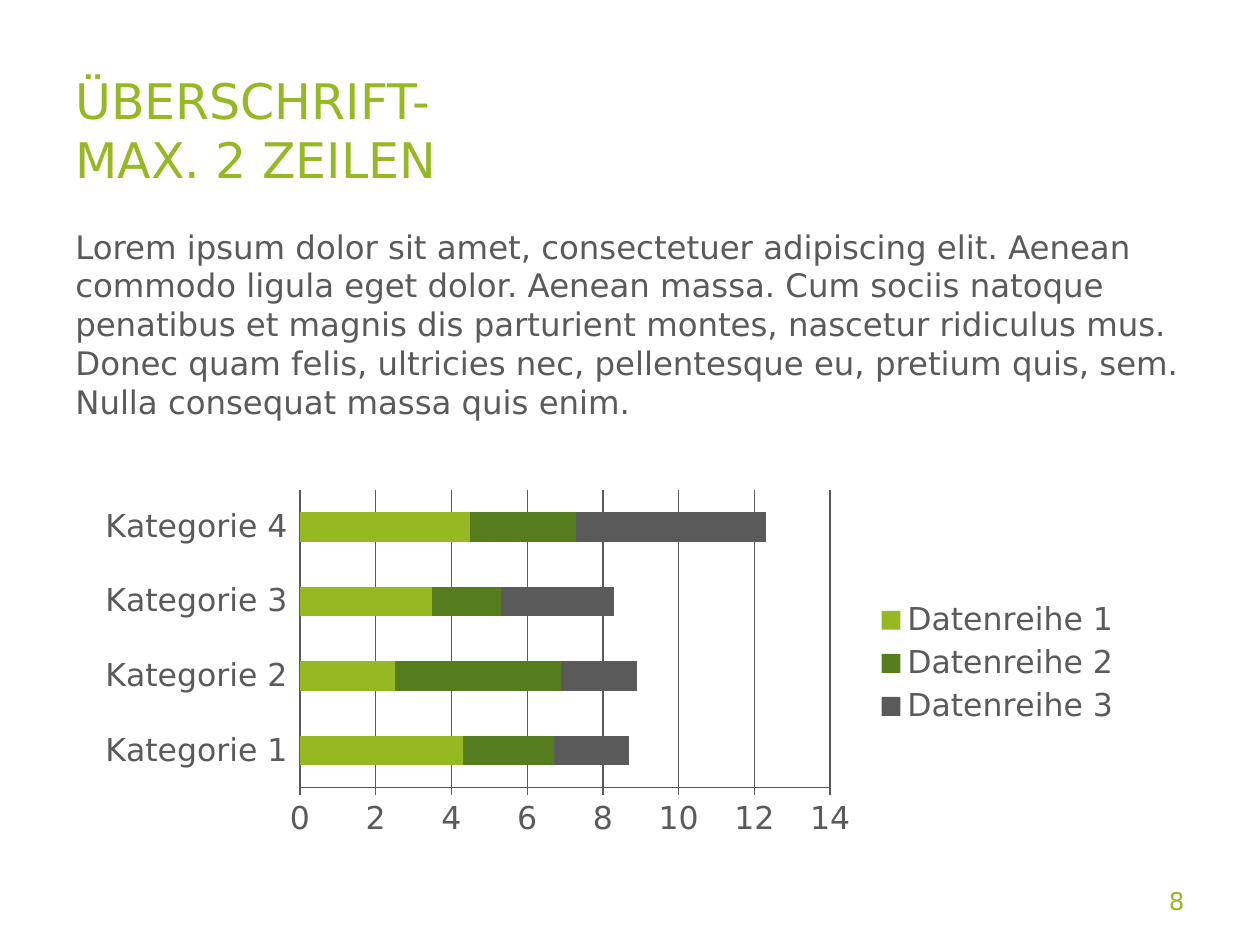
from pptx import Presentation
from pptx.chart.data import CategoryChartData
from pptx.dml.color import RGBColor
from pptx.enum.chart import XL_CHART_TYPE, XL_LEGEND_POSITION, XL_TICK_MARK
from pptx.enum.text import MSO_ANCHOR, PP_ALIGN
from pptx.util import Inches, Pt

BAR_STACKED = XL_CHART_TYPE.BAR_STACKED
LEGEND_RIGHT = XL_LEGEND_POSITION.RIGHT
TICK_CROSS = XL_TICK_MARK.CROSS
TOP, MIDDLE = MSO_ANCHOR.TOP, MSO_ANCHOR.MIDDLE
LEFT, RIGHT = PP_ALIGN.LEFT, PP_ALIGN.RIGHT

FONT = "DejaVu Sans"
GREEN, DARK_GREEN, GRAY, LINE_GRAY = "96B923", "557D1E", "5A5A5A", "595959"

TITLE = "ÜBERSCHRIFT-\vMAX. 2 ZEILEN"
BODY = (
    "Lorem ipsum dolor sit amet, consectetuer adipiscing elit. Aenean commodo "
    "ligula eget dolor. Aenean massa. Cum sociis natoque penatibus et magnis dis "
    "parturient montes, nascetur ridiculus mus. Donec quam felis, ultricies nec, "
    "pellentesque eu, pretium quis, sem. Nulla consequat massa quis enim."
)
PAGE_NUMBER = "8"

CATEGORIES = ["Kategorie 1", "Kategorie 2", "Kategorie 3", "Kategorie 4"]
SERIES = [
    ("Datenreihe 1", (4.3, 2.5, 3.5, 4.5), GREEN),
    ("Datenreihe 2", (2.4, 4.4, 1.8, 2.8), DARK_GREEN),
    ("Datenreihe 3", (2, 2, 3, 5), GRAY),
]


def color(hex_string):
    return RGBColor.from_string(hex_string)


def style_font(font, size, hex_string):
    font.name = FONT
    font.size = Pt(size)
    font.color.rgb = color(hex_string)


def style_line(line):
    line.color.rgb = color(LINE_GRAY)
    line.width = Pt(0.75)


def add_text(slide, text, box, *, size, hex_string, anchor=TOP, align=LEFT):
    shape = slide.shapes.add_textbox(*map(Inches, box))
    frame = shape.text_frame
    frame.word_wrap = True
    frame.vertical_anchor = anchor
    paragraph = frame.paragraphs[0]
    paragraph.text = text
    paragraph.alignment = align
    for run in paragraph.runs:
        style_font(run.font, size, hex_string)


def add_stacked_bars(slide, box):
    data = CategoryChartData()
    data.categories = CATEGORIES
    for name, values, _ in SERIES:
        data.add_series(name, values)
    chart = slide.shapes.add_chart(BAR_STACKED, *map(Inches, box), data).chart
    style_font(chart.font, 18, GRAY)
    chart.has_title = False
    chart.has_legend = True
    chart.legend.position = LEGEND_RIGHT
    chart.legend.include_in_layout = False

    plot = chart.plots[0]
    plot.gap_width = 150
    plot.overlap = 100
    plot.vary_by_categories = False
    for series, (_, _, fill) in zip(plot.series, SERIES):
        series.format.fill.solid()
        series.format.fill.fore_color.rgb = color(fill)

    category_axis, value_axis = chart.category_axis, chart.value_axis
    for axis in (category_axis, value_axis):
        axis.major_tick_mark = TICK_CROSS
    category_axis.format.line.fill.background()
    value_axis.has_major_gridlines = True
    style_line(value_axis.format.line)
    style_line(value_axis.major_gridlines.format.line)


def main():
    presentation = Presentation()
    presentation.slide_width = Inches(10)
    presentation.slide_height = Inches(7.5)
    slide = presentation.slides.add_slide(presentation.slide_layouts[6])

    add_text(slide, TITLE, (0.5, 0.5, 6.36, 1.05), size=28, hex_string=GREEN, anchor=MIDDLE)
    add_text(slide, BODY, (0.5, 1.75, 9, 1.83), size=18.5, hex_string=GRAY)
    add_stacked_bars(slide, (0.67, 3.83, 8.33, 2.87))
    add_text(slide, PAGE_NUMBER, (7.17, 6.95, 2.33, 0.4), size=14, hex_string=GREEN,
             anchor=MIDDLE, align=RIGHT)

    presentation.save("out.pptx")


if __name__ == "__main__":
    main()
